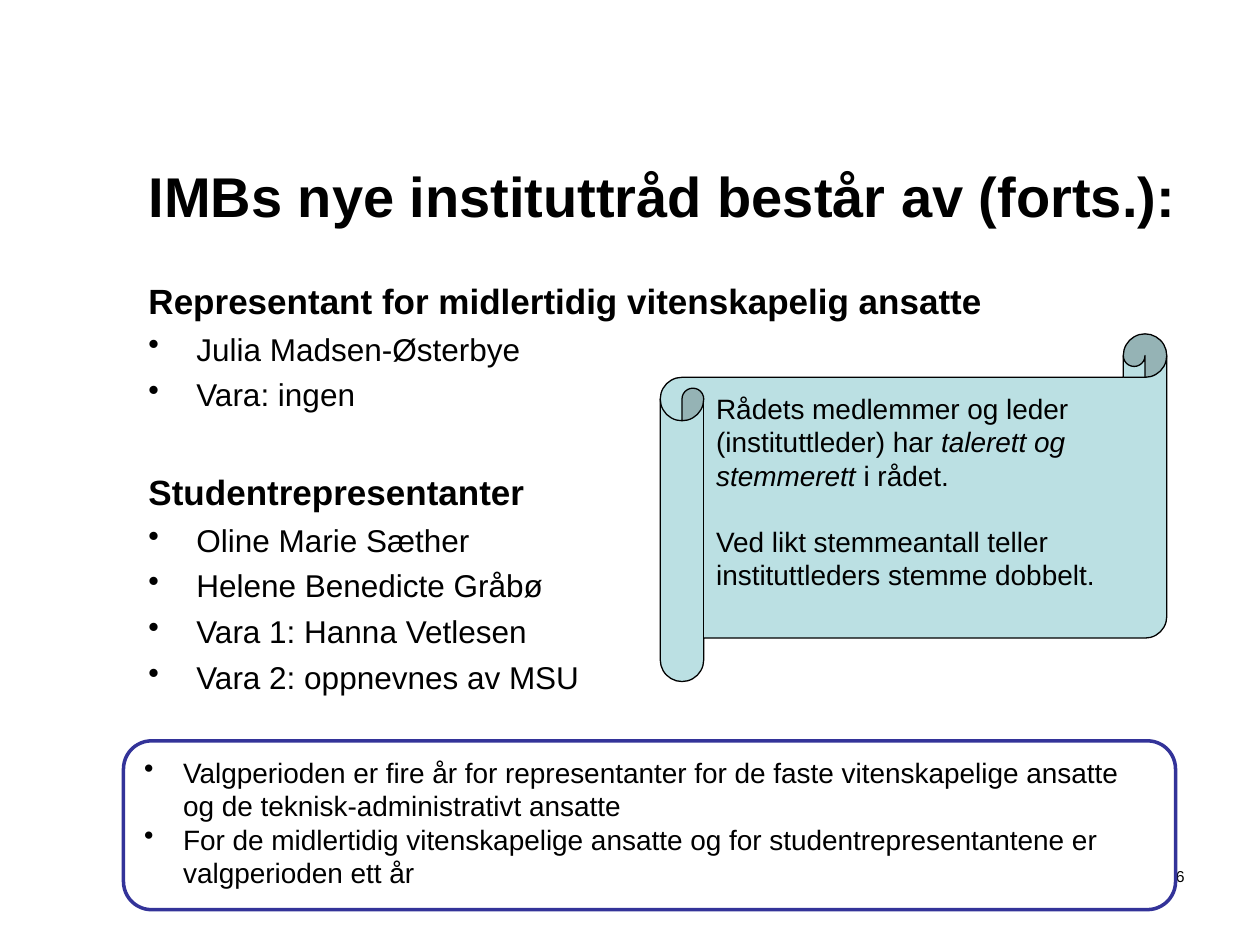
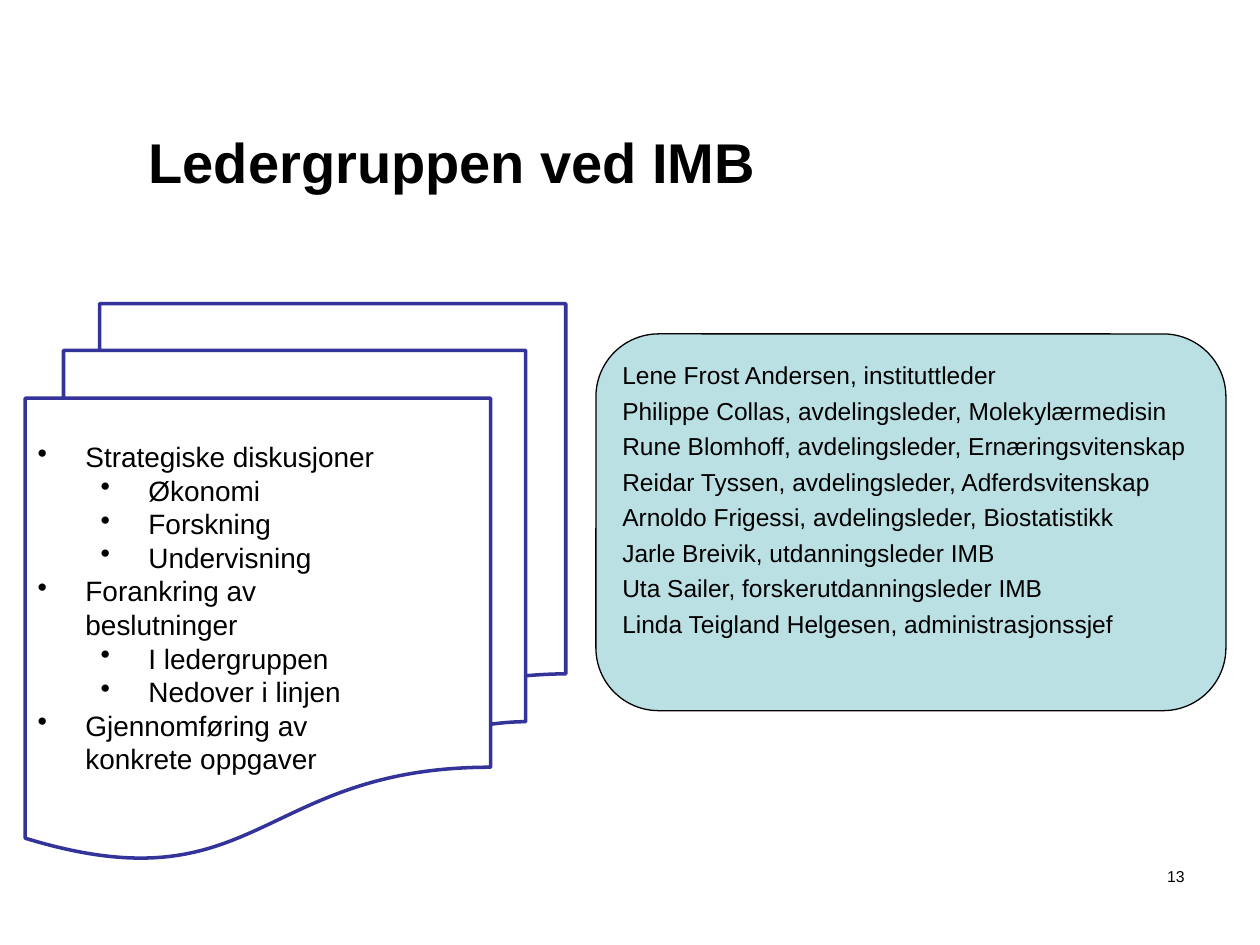
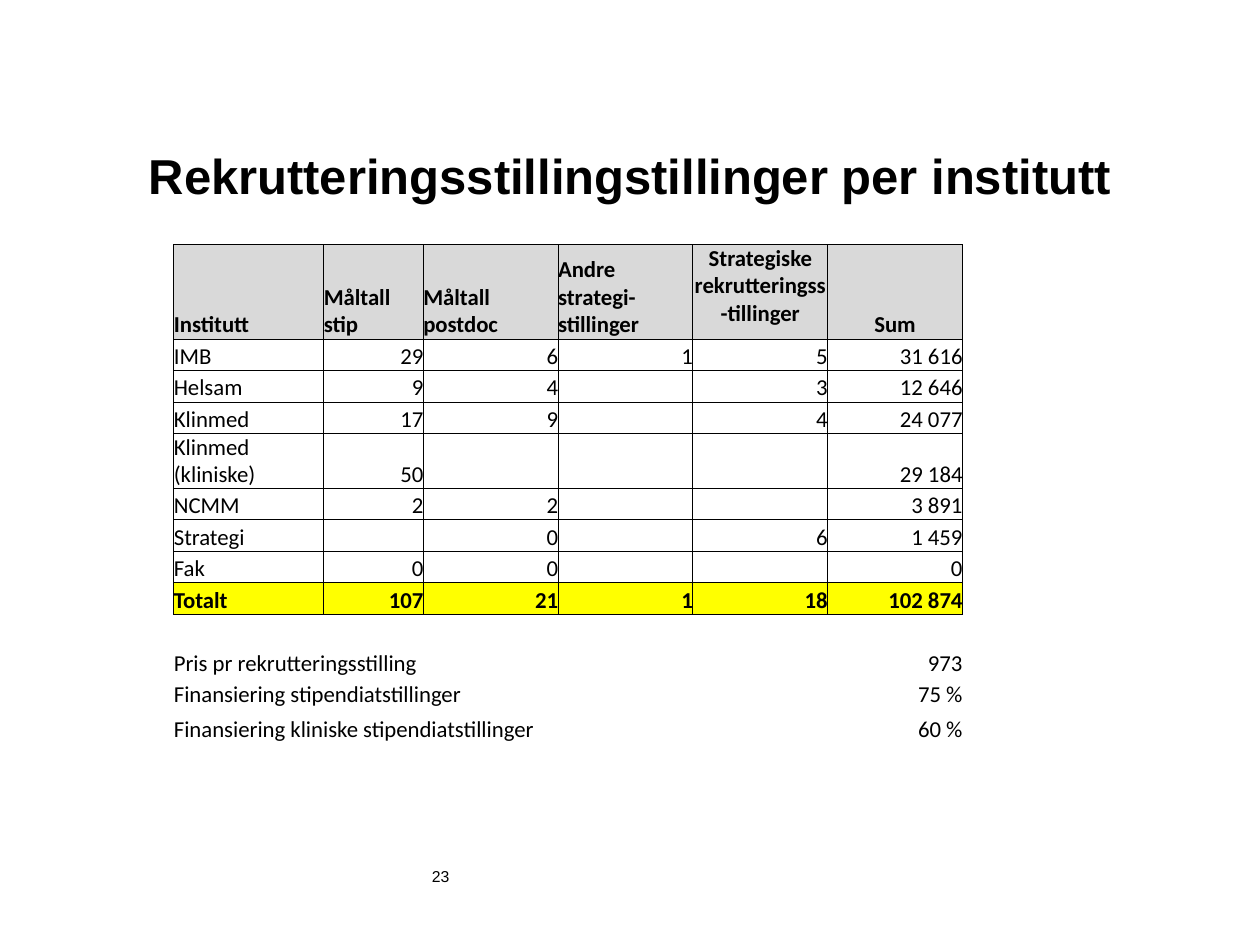
import dataclasses

import pptx
import pptx.dml.color
import pptx.enum.shapes
import pptx.enum.text
import pptx.oxml
import pptx.oxml.ns
import pptx.util
from pptx.util import Inches, Pt

ALIGN = pptx.enum.text.PP_ALIGN
ANCHOR = pptx.enum.text.MSO_ANCHOR
SHAPE = pptx.enum.shapes.MSO_SHAPE

BLACK, WHITE, NAVY, TEAL = "000000", "FFFFFF", "333399", "BBE0E3"
GREY, YELLOW = "D9D9D9", "FFFF00"
FONT, TABLE_FONT = "Arial", "Calibri"
TITLE_LEFT, TITLE_TOP, TITLE_WIDTH = 1.08, 0.92, 8.42
NUMBER_TOP, NUMBER_HEIGHT = 6.83, 0.5
SPACING = 0.25  # paragraph gap as a share of the text size


@dataclasses.dataclass
class Line:
    """One paragraph; text is a string or a list of (text, italic) runs."""
    text: object
    size: float = 16
    bold: bool = False
    indent: tuple = None  # left margin and hanging depth of a bullet
    before: float = 0
    align: object = ALIGN.LEFT


COUNCIL = [
    ("Representant for midlertidig vitenskapelig ansatte",
     ["Julia Madsen-Østerbye", "Vara: ingen"]),
    ("Studentrepresentanter",
     ["Oline Marie Sæther", "Helene Benedicte Gråbø",
      "Vara 1: Hanna Vetlesen", "Vara 2: oppnevnes av MSU"]),
]
TERMS = [
    "Valgperioden er fire år for representanter for de faste vitenskapelige ansatte "
    "og de teknisk-administrativt ansatte",
    "For de midlertidig vitenskapelige ansatte og for studentrepresentantene er "
    "valgperioden ett år",
]
VOTING = [
    [("Rådets medlemmer og leder (instituttleder) har ", False),
     ("talerett og stemmerett", True), (" i rådet.", False)],
    "Ved likt stemmeantall teller instituttleders stemme dobbelt.",
]
LEADERS = [
    "Lene Frost Andersen, instituttleder",
    "Philippe Collas, avdelingsleder, Molekylærmedisin",
    "Rune Blomhoff, avdelingsleder, Ernæringsvitenskap",
    "Reidar Tyssen, avdelingsleder, Adferdsvitenskap",
    "Arnoldo Frigessi, avdelingsleder, Biostatistikk",
    "Jarle Breivik, utdanningsleder IMB",
    "Uta Sailer, forskerutdanningsleder IMB",
    "Linda Teigland Helgesen, administrasjonssjef",
]
TASKS = [
    ("Strategiske diskusjoner", ["Økonomi", "Forskning", "Undervisning"]),
    ("Forankring av beslutninger", ["I ledergruppen", "Nedover i linjen"]),
    ("Gjennomføring av konkrete oppgaver", []),
]
POSITIONS = [
    ["Institutt", "Måltall stip", "Måltall postdoc", "Andre strategi-stillinger",
     "Strategiske rekrutteringss-tillinger", "Sum"],
    ["IMB", "29", "6", "1", "5", "31 616"],
    ["Helsam", "9", "4", "", "3", "12 646"],
    ["Klinmed", "17", "9", "", "4", "24 077"],
    ["Klinmed (kliniske)", "50", "", "", "", "29 184"],
    ["NCMM", "2", "2", "", "", "3 891"],
    ["Strategi", "", "0", "", "6", "1 459"],
    ["Fak", "0", "0", "", "", "0"],
    ["Totalt", "107", "21", "1", "18", "102 874"],
    [""] * 6,
    ["Pris pr rekrutteringsstilling", "", "", "", "", "973"],
    ["Finansiering stipendiatstillinger", "", "", "", "", "75 %"],
    ["Finansiering kliniske stipendiatstillinger", "", "", "", "", "60 %"],
]
COLUMN_WIDTHS = [1.19, 0.79] + [1.07] * 4
ROW_HEIGHTS = [0.75] + [0.25] * 11 + [0.28]
TOTAL_ROW = 8
LAST_MERGED_COLUMN = {10: 1, 11: 2, 12: 2}


def color(hex_string):
    return pptx.dml.color.RGBColor.from_string(hex_string)


def style_font(font, size, bold=False, name=FONT):
    font.name, font.size, font.bold = name, Pt(size), bold
    font.color.rgb = color(BLACK)


def add_bullet(paragraph, left, hanging):
    properties = paragraph._p.get_or_add_pPr()
    properties.set("marL", str(Inches(left)))
    properties.set("indent", str(-Inches(hanging)))
    bullet = pptx.oxml.parse_xml(
        f'<a:buChar {pptx.oxml.ns.nsdecls("a")} char="•"/>')
    properties.insert_element_before(bullet, "a:tabLst", "a:defRPr", "a:extLst")


def write_lines(frame, lines):
    frame.word_wrap = True
    for index, line in enumerate(lines):
        para = frame.paragraphs[0] if index == 0 else frame.add_paragraph()
        runs = [(line.text, False)] if isinstance(line.text, str) else line.text
        for text, italic in runs:
            span = para.add_run()
            span.text = text
            if italic:
                span.font.italic = True
        para.alignment = line.align
        para.space_before = Pt(line.before)
        style_font(para.font, line.size, line.bold)
        if line.indent:
            add_bullet(para, *line.indent)


def add_text(page, position, lines):
    box = page.shapes.add_textbox(*map(Inches, position))
    write_lines(box.text_frame, lines)


def add_panel(page, kind, position, fill, outline, width, lines=()):
    panel = page.shapes.add_shape(kind, *map(Inches, position))
    panel.shadow.inherit = False
    panel.fill.solid()
    panel.fill.fore_color.rgb = color(fill)
    panel.line.color.rgb = color(outline)
    panel.line.width = Pt(width)
    panel.text_frame.vertical_anchor = ANCHOR.TOP
    write_lines(panel.text_frame, lines)
    return panel


def add_page(deck, title, title_height, number, title_size=32,
             number_left=8.75, number_width=0.75, number_align=ALIGN.RIGHT):
    page = deck.slides.add_slide(deck.slide_layouts[5])
    heading = page.shapes.title
    heading.left, heading.top = Inches(TITLE_LEFT), Inches(TITLE_TOP)
    heading.width, heading.height = Inches(TITLE_WIDTH), Inches(title_height)
    heading.text_frame.auto_size = pptx.enum.text.MSO_AUTO_SIZE.NONE
    heading.text_frame.vertical_anchor = ANCHOR.MIDDLE
    write_lines(heading.text_frame, [Line(title, title_size, bold=True)])
    add_text(page, (number_left, NUMBER_TOP, number_width, NUMBER_HEIGHT),
             [Line(number, 9, align=number_align)])
    return page


def add_council_page(deck):
    page = add_page(deck, "IMBs nye instituttråd består av (forts.):", 1.25, "6")
    lines = []
    for heading, members in COUNCIL:
        lines.append(Line(heading, 20, bold=True, before=33 if lines else 0))
        lines += [Line(member, 18, indent=(0.38, 0.38), before=18 * SPACING)
                  for member in members]
    add_text(page, (1.08, 2.17, 8.42, 3.79), lines)
    add_panel(page, SHAPE.ROUNDED_RECTANGLE, (0.98, 5.88, 8.35, 1.34), WHITE, NAVY, 2,
              [Line(term, indent=(0.31, 0.31)) for term in TERMS])
    scroll = add_panel(page, SHAPE.HORIZONTAL_SCROLL, (5.24, 2.65, 4.02, 2.76),
                       TEAL, BLACK, 0.75,
                       [Line(rule, before=18.4 * index)
                        for index, rule in enumerate(VOTING)])
    scroll.text_frame.margin_top = Inches(0.11)


def add_leaders_page(deck):
    page = add_page(deck, "Ledergruppen ved IMB", 0.71, "13")
    add_panel(page, SHAPE.ROUNDED_RECTANGLE, (4.73, 2.65, 5, 2.99), TEAL, BLACK, 0.75)
    add_text(page, (4.84, 2.81, 4.88, 2.68),
             [Line(leader, 14, before=14 * SPACING if index else 0)
              for index, leader in enumerate(LEADERS)])
    add_panel(page, SHAPE.FLOWCHART_MULTIDOCUMENT, (0.2, 2.41, 4.29, 4.41),
              WHITE, NAVY, 2)
    lines = []
    for task, details in TASKS:
        lines.append(Line(task, indent=(0.38, 0.38)))
        lines += [Line(detail, indent=(0.88, 0.38)) for detail in details]
    add_text(page, (0.2, 3.44, 2.99, 3.62), lines)


def set_borders(cell, visible_sides):
    properties = cell._tc.get_or_add_tcPr()
    for side in "LRTB":
        if side in visible_sides:
            paint = f'<a:solidFill><a:srgbClr val="{BLACK}"/></a:solidFill>'
        else:
            paint = "<a:noFill/>"
        properties.append(pptx.oxml.parse_xml(
            f'<a:ln{side} {pptx.oxml.ns.nsdecls("a")} w="{Pt(0.5)}">{paint}</a:ln{side}>'))


def style_cell(cell, text, row, column):
    cell.margin_left = cell.margin_right = cell.margin_top = cell.margin_bottom = 0
    cell.vertical_anchor = ANCHOR.TOP if (row, column) == (0, 4) else ANCHOR.BOTTOM
    set_borders(cell, "LRTB" if row <= TOTAL_ROW else "T" if row == TOTAL_ROW + 1 else "")
    fill = {0: GREY, TOTAL_ROW: YELLOW}.get(row)
    if fill:
        cell.fill.solid()
        cell.fill.fore_color.rgb = color(fill)
    else:
        cell.fill.background()
    para = cell.text_frame.paragraphs[0]
    if text:
        para.text = text
    else:
        para._p.get_or_add_endParaRPr().set("sz", "1300")
    style_font(para.font, 13, row in (0, TOTAL_ROW), TABLE_FONT)
    if row == 0:
        para.alignment = ALIGN.CENTER if column >= 4 else ALIGN.LEFT
    else:
        para.alignment = ALIGN.RIGHT if column else ALIGN.LEFT


def add_positions_page(deck):
    page = add_page(deck, "Rekrutteringsstillingstillinger per institutt", 0.94, "23",
                    title_size=28, number_left=3.33, number_width=5.25,
                    number_align=ALIGN.LEFT)
    table = page.shapes.add_table(
        len(POSITIONS), len(COLUMN_WIDTHS), Inches(1.38), Inches(1.94),
        Inches(sum(COLUMN_WIDTHS)), Inches(sum(ROW_HEIGHTS))).table
    table.first_row = table.horz_banding = False
    for column, width in zip(table.columns, COLUMN_WIDTHS):
        column.width = Inches(width)
    for row, height in zip(table.rows, ROW_HEIGHTS):
        row.height = Inches(height)
    for row, texts in enumerate(POSITIONS):
        for column, text in enumerate(texts):
            style_cell(table.cell(row, column), text, row, column)
    for row, last_column in LAST_MERGED_COLUMN.items():
        table.cell(row, 0).merge(table.cell(row, last_column))


def main():
    deck = pptx.Presentation()
    deck.slide_width, deck.slide_height = Inches(10), Inches(7.5)
    add_council_page(deck)
    add_leaders_page(deck)
    add_positions_page(deck)
    deck.save("out.pptx")


if __name__ == "__main__":
    main()
